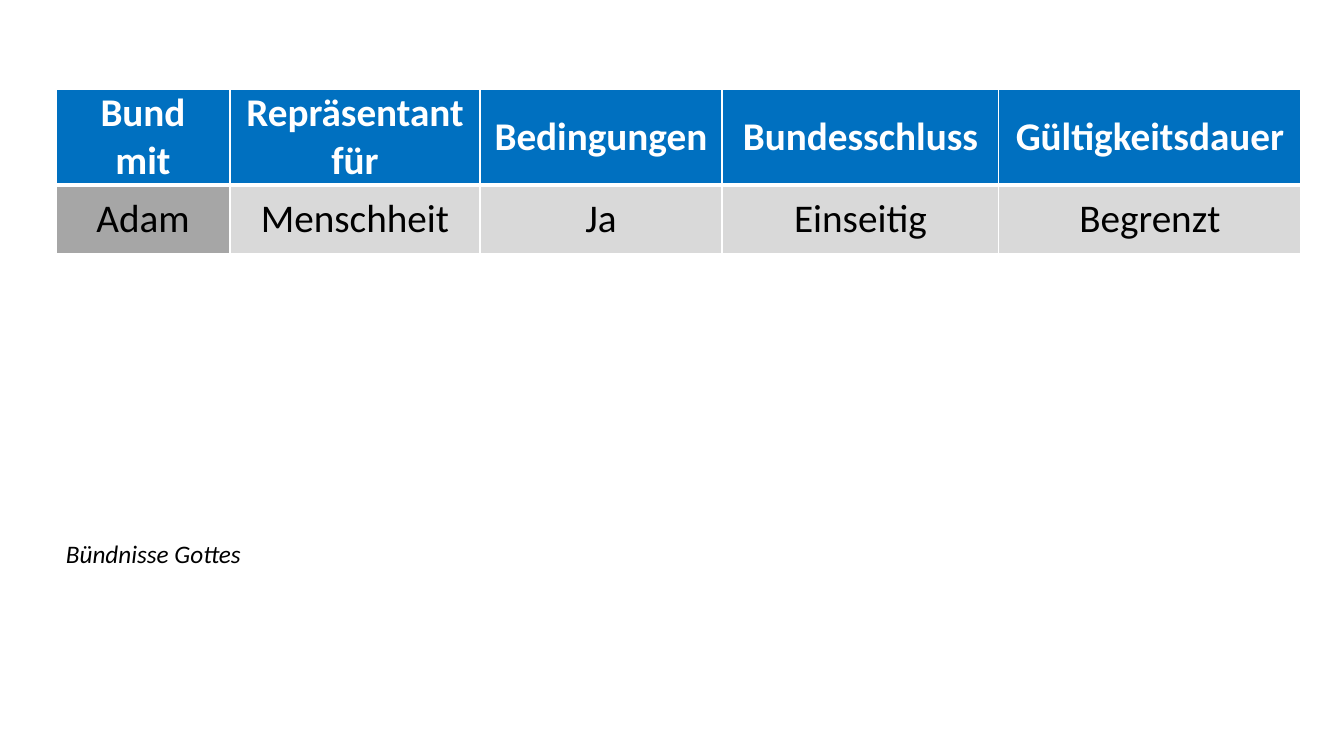
from lxml.etree import SubElement
from pptx import Presentation
from pptx.dml.color import RGBColor
from pptx.enum.text import MSO_ANCHOR, MSO_AUTO_SIZE, PP_ALIGN
from pptx.oxml.ns import qn
from pptx.util import Emu, Inches, Pt

WHITE = RGBColor(0xFF, 0xFF, 0xFF)
BLACK = RGBColor(0, 0, 0)
BLUE = RGBColor(0x00, 0x70, 0xC0)
DARK_GREY = RGBColor(0xA6, 0xA6, 0xA6)
LIGHT_GREY = RGBColor(0xD9, 0xD9, 0xD9)
FONT = "Calibri"

COVENANTS = [
    ("Bund mit", "Repräsentant für", "Bedingungen", "Bundesschluss", "Gültigkeitsdauer"),
    ("Adam", "Menschheit", "Ja", "Einseitig", "Begrenzt"),
]
CAPTION = "Bündnisse Gottes"

LEFT, TABLE_TOP, TABLE_HEIGHT = 56, 89, 163
COLUMN_WIDTHS = (174, 250, 242, 277, 302)
ROW_HEIGHTS = (47, 69)
CELL_MARGIN = 14
CAPTION_TOP, CAPTION_WIDTH, CAPTION_HEIGHT = 533, 198, 40


def px(length):
    return Emu(round(length * Inches(1) / 100.8))


def add_run(paragraph, text, size, color, bold=False, italic=False):
    run = paragraph.add_run()
    run.text = text
    font = run.font
    font.name, font.size = FONT, Pt(size)
    font.bold, font.italic = bold, italic
    font.color.rgb = color


def add_borders(cell, widths):
    """Draw white borders; widths maps a side tag to points."""
    properties = cell._tc.get_or_add_tcPr()
    for position, (side, width) in enumerate(widths.items()):
        line = SubElement(properties, qn(f"a:{side}"), w=str(Pt(width)))
        SubElement(SubElement(line, qn("a:solidFill")), qn("a:srgbClr"), val=str(WHITE))
        properties.insert(position, line)


def fill_cell(cell, text, row, column):
    is_header = row == 0
    cell.vertical_anchor = MSO_ANCHOR.MIDDLE
    cell.margin_left = cell.margin_right = px(CELL_MARGIN)
    cell.margin_top = cell.margin_bottom = 0
    cell.fill.solid()
    body_fill = DARK_GREY if column == 0 else LIGHT_GREY
    cell.fill.fore_color.rgb = BLUE if is_header else body_fill
    rule_below_header = 3
    add_borders(cell, {
        "lnL": 1,
        "lnR": 1,
        "lnT": 1 if is_header else rule_below_header,
        "lnB": rule_below_header if is_header else 1,
    })
    paragraph = cell.text_frame.paragraphs[0]
    paragraph.alignment = PP_ALIGN.CENTER
    add_run(paragraph, text, 28, WHITE if is_header else BLACK, bold=is_header)


def add_covenant_table(slide):
    frame = slide.shapes.add_table(
        len(COVENANTS), len(COLUMN_WIDTHS), px(LEFT), px(TABLE_TOP),
        px(sum(COLUMN_WIDTHS)), px(TABLE_HEIGHT))
    table = frame.table
    for column, width in zip(table.columns, COLUMN_WIDTHS):
        column.width = px(width)
    for row, height in zip(table.rows, ROW_HEIGHTS):
        row.height = px(height)
    frame.height = px(TABLE_HEIGHT)
    for row, texts in enumerate(COVENANTS):
        for column, text in enumerate(texts):
            fill_cell(table.cell(row, column), text, row, column)


def add_caption(slide):
    caption = slide.shapes.add_textbox(
        px(LEFT), px(CAPTION_TOP), px(CAPTION_WIDTH), px(CAPTION_HEIGHT)).text_frame
    caption.word_wrap = False
    caption.auto_size = MSO_AUTO_SIZE.SHAPE_TO_FIT_TEXT
    add_run(caption.paragraphs[0], CAPTION, 18, BLACK, italic=True)


def main():
    deck = Presentation()
    deck.slide_width, deck.slide_height = px(1344), px(756)
    slide = deck.slides.add_slide(deck.slide_layouts[6])
    add_covenant_table(slide)
    add_caption(slide)
    deck.save("out.pptx")


if __name__ == "__main__":
    main()
